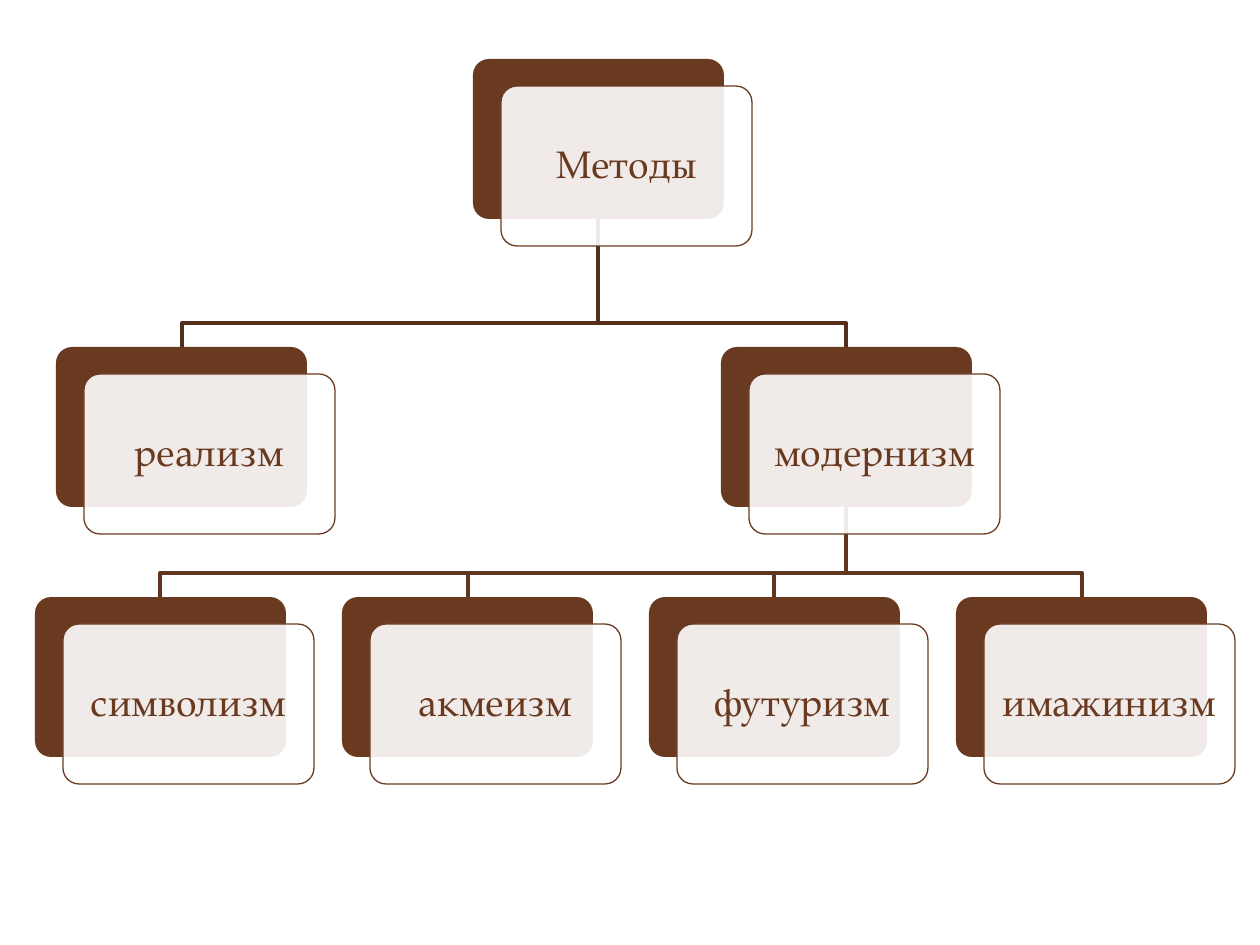
import pptx
import pptx.util
import pptx.dml.color
import pptx.enum.shapes
import pptx.enum.text
import pptx.oxml.ns
from dataclasses import dataclass
from lxml import etree

PX = 914400 / 126  # EMU in one px


@dataclass(frozen=True)
class Theme:
    font: str = "TeX Gyre Pagella"
    size: int = 22
    brown: str = "6A3A20"
    white: str = "FFFFFF"
    upper_link: str = "552E1A"
    lower_link: str = "60351D"
    link_width: float = 2.25
    border_width: float = 0.75
    card_alpha: int = 90


THEME = Theme()
CARD_W, CARD_H = 251, 160
SHIFT_X, SHIFT_Y = 28, 27  # front card relative to back card
BEND = 24                  # height of the bend above a child
INSET = 11


def px(n):
    return pptx.util.Emu(round(n * PX))


def rgb(colour):
    return pptx.dml.color.RGBColor.from_string(colour)


def set_fill(s, colour, alpha=100):
    s.fill.solid()
    s.fill.fore_color.rgb = rgb(colour)
    if alpha < 100:
        clr = s.fill._xPr.find(".//" + pptx.oxml.ns.qn("a:srgbClr"))
        etree.SubElement(clr, pptx.oxml.ns.qn("a:alpha"), val=str(alpha * 1000))


def set_line(s, colour, width):
    s.line.color.rgb = rgb(colour)
    s.line.width = pptx.util.Pt(width)


def write(s, text, size=THEME.size, colour=THEME.brown, font=THEME.font):
    tf = s.text_frame
    tf.word_wrap = True
    tf.vertical_anchor = pptx.enum.text.MSO_ANCHOR.MIDDLE
    tf.margin_left = tf.margin_right = tf.margin_top = tf.margin_bottom = px(INSET)
    p = tf.paragraphs[0]
    p.alignment = pptx.enum.text.PP_ALIGN.CENTER
    p.line_spacing = 0.9
    r = p.add_run()
    r.text = text
    r.font.name = font
    r.font.size = pptx.util.Pt(size)
    r.font.color.rgb = rgb(colour)


def add_round_rect(shapes, x, y):
    s = shapes.add_shape(pptx.enum.shapes.MSO_SHAPE.ROUNDED_RECTANGLE,
                         px(x), px(y), px(CARD_W), px(CARD_H))
    s.adjustments[0] = 0.1
    s.shadow.inherit = False
    return s


def add_node(shapes, text, x, y):
    """Solid back card with a translucent labelled card in front."""
    back = add_round_rect(shapes, x, y)
    set_fill(back, THEME.brown)
    back.line.fill.background()
    front = add_round_rect(shapes, x + SHIFT_X, y + SHIFT_Y)
    set_fill(front, THEME.white, THEME.card_alpha)
    set_line(front, THEME.brown, THEME.border_width)
    write(front, text)


def add_link(shapes, parent, child, colour):
    """Elbow from the bottom of the parent's back card to the child's top."""
    x1, y1 = parent[0] + CARD_W / 2, parent[1] + CARD_H
    x2, y2 = child[0] + CARD_W / 2, child[1]
    fb = shapes.build_freeform(x1, y1, scale=PX)
    fb.add_line_segments([(x1, y2 - BEND), (x2, y2 - BEND), (x2, y2)], close=False)
    s = fb.convert_to_shape()
    s.shadow.inherit = False
    s.fill.background()
    set_line(s, colour, THEME.link_width)


def add_hierarchy(slide, left, top):
    """Tree of methods; node places are relative to left and top."""
    shapes = slide.shapes.add_group_shape().shapes
    movements = ["символизм", "акмеизм", "футуризм", "имажинизм"]
    places = {"Методы": (438, 0), "реализм": (21, 288), "модернизм": (686, 288)}
    places.update({name: (i * 307, 538) for i, name in enumerate(movements)})
    nodes = {name: (left + x, top + y) for name, (x, y) in places.items()}

    # Links lie behind the cards
    branches = [("модернизм", movements, THEME.lower_link),
                ("Методы", ["реализм", "модернизм"], THEME.upper_link)]
    for parent, children, colour in branches:
        for child in reversed(children):
            add_link(shapes, nodes[parent], nodes[child], colour)

    # Cards
    for name, (x, y) in nodes.items():
        add_node(shapes, name, x, y)


def main():
    prs = pptx.Presentation()
    prs.slide_width, prs.slide_height = px(1260), px(945)
    slide = prs.slides.add_slide(prs.slide_layouts[6])
    add_hierarchy(slide, left=35, top=59)
    prs.save("out.pptx")


if __name__ == "__main__":
    main()
